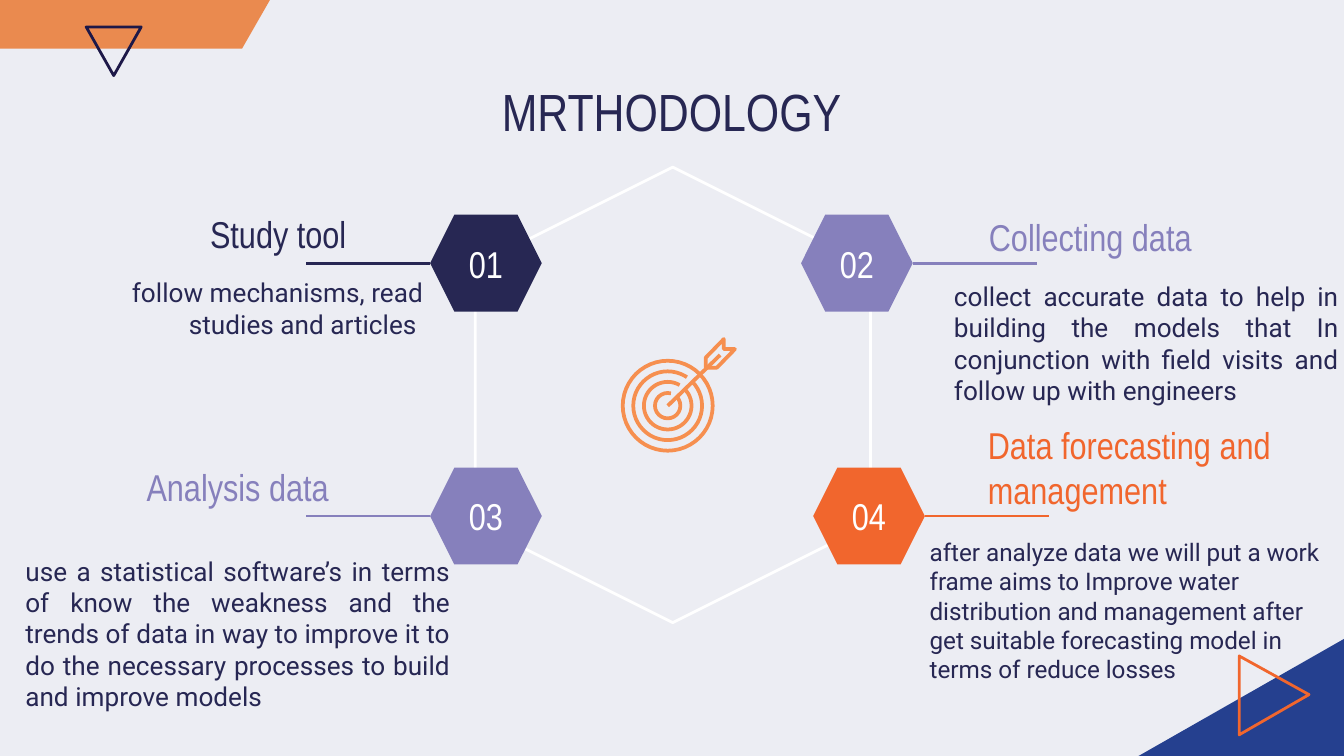
from lxml import etree
from pptx import Presentation
from pptx import util as u
from pptx.dml.color import RGBColor
from pptx.enum import shapes, text
from pptx.oxml.ns import qn

NAVY = RGBColor(0x27, 0x27, 0x53)
LILAC = RGBColor(0x86, 0x80, 0xBC)
FLAME = RGBColor(0xF1, 0x66, 0x2D)
WHITE = RGBColor(0xFF, 0xFF, 0xFF)
PALE = RGBColor(0xEC, 0xED, 0xF3)
PEACH = RGBColor(0xEA, 0x8A, 0x4F)
BLUE = RGBColor(0x25, 0x40, 0x8F)
INK = RGBColor(0x1D, 0x18, 0x48)
GOLD = RGBColor(0xF6, 0x8F, 0x4F)

HEAD, BODY = "Arial Narrow", "Roboto"
KIND, ALIGN = shapes.MSO_SHAPE, text.PP_ALIGN
TOP, MID = text.MSO_ANCHOR.TOP, text.MSO_ANCHOR.MIDDLE
LEFT, RIGHT, FULL = ALIGN.LEFT, ALIGN.RIGHT, ALIGN.JUSTIFY

TITLE = "MRTHODOLOGY"
HEX_W, HEX_H, ARM = 2.11, 1.83, 2.34
STEPS = [
    dict(num="01", hue=NAVY, spot=(8.13, 4.06), side=RIGHT,
         head="Study tool ", hbox=(2.03, 4.01, 4.93, 0.81),
         body="follow mechanisms, read studies and articles ",
         bbox=(1.8, 4.98, 6.45, 1.8), flow=RIGHT, size=14),
    dict(num="02", hue=LILAC, spot=(15.14, 4.06), side=LEFT,
         head="Collecting data", hbox=(18.44, 4.06, 4.93, 0.81),
         body="collect accurate data to help in building the models that In "
              "conjunction with field visits and follow up with engineers",
         bbox=(17.78, 5.05, 7.77, 2.87), flow=FULL, size=14),
    dict(num="03", hue=LILAC, spot=(8.13, 8.84), side=RIGHT,
         head="Analysis data ", hbox=(1.7, 8.79, 4.93, 0.81),
         body="use a statistical software’s in terms of know the weakness and "
              "the trends of data in way to improve it to do the necessary "
              "processes to build and improve models",
         bbox=(0.23, 10.24, 8.53, 3.73), flow=FULL, size=14),
    dict(num="04", hue=FLAME, spot=(15.37, 8.84), side=LEFT,
         head="Data forecasting and management", hbox=(18.42, 8.1, 6.4, 1.47),
         body="after analyze data we will put a work frame aims to Improve "
              "water distribution and management after get suitable "
              "forecasting model in terms of reduce losses",
         bbox=(17.32, 9.91, 8.18, 3.02), flow=LEFT, size=13),
]
HUB = (12.62, 7.67)
RINGS = [(0.85, 0, 359.99), (0.65, 315, 304), (0.45, 318, 300), (0.24, 320, 285)]
TAIL = [(13.34, 6.76), (13.68, 6.41), (13.68, 6.6),
        (13.89, 6.6), (13.55, 6.95), (13.34, 6.95)]

deck = Presentation()
deck.slide_width, deck.slide_height = u.Cm(25.4), u.Cm(14.29)
slide = deck.slides.add_slide(deck.slide_layouts[5])
slide.background.fill.solid()
slide.background.fill.fore_color.rgb = PALE
tree = slide.shapes


def cm(vals):
    return [u.Cm(v) for v in vals]


def paint(shape, fill=None, line=None, width=1.5):
    shape.shadow.inherit = False
    if fill is None:
        shape.fill.background()
    else:
        shape.fill.solid()
        shape.fill.fore_color.rgb = fill
    if line is None:
        shape.line.fill.background()
    else:
        shape.line.color.rgb = line
        shape.line.width = u.Pt(width)
    return shape


def form(kind, box, **look):
    return paint(tree.add_shape(kind, *cm(box)), **look)


def trace(dots, **look):
    pen = tree.build_freeform(*cm(dots[0]), scale=1.0)
    pen.add_line_segments([cm(dot) for dot in dots[1:]], close=True)
    return paint(pen.convert_to_shape(), **look)


def rule(start, end, hue, width=1.5):
    line = tree.add_connector(shapes.MSO_CONNECTOR.STRAIGHT, *cm(start), *cm(end))
    line.line.color.rgb = hue
    line.line.width = u.Pt(width)
    etree.SubElement(line._element.spPr, qn("a:effectLst"))


def write(words, box=None, shape=None, size=20, face=HEAD, hue=NAVY,
          align=LEFT, anchor=MID):
    shape = shape or tree.add_textbox(*cm(box))
    frame = shape.text_frame
    frame.word_wrap = True
    frame.auto_size = text.MSO_AUTO_SIZE.NONE
    frame.vertical_anchor = anchor
    frame.margin_left = frame.margin_right = u.Cm(0.25)
    frame.margin_top = frame.margin_bottom = u.Cm(0.25)
    para = frame.paragraphs[0]
    para.alignment = align
    run = para.add_run()
    run.text = words
    run.font.size = u.Pt(size)
    run.font.name = face
    run.font.color.rgb = hue


form(KIND.HEXAGON, (-0.56, -0.91, 5.66, 1.83), fill=PEACH).adjustments[0] = 0.286
trace([(1.63, 0.51), (2.67, 0.51), (2.15, 1.43)], line=INK)
form(KIND.DIAMOND, (21.44, 11.91, 8.51, 4.85), fill=BLUE)
trace([(23.42, 12.4), (24.74, 13.13), (23.42, 13.89)], line=FLAME)

loop = form(KIND.HEXAGON, (8.41, 3.73, 8.61, 7.47), line=WHITE)
loop.adjustments[0] = 0.25
loop.rotation = 90

title = tree.title
title.left, title.top, title.width, title.height = cm((3.23, 1.24, 18.92, 1.6))
write(TITLE, shape=title, size=28, align=ALIGN.CENTER, anchor=TOP)

for step in STEPS:
    left, top = step["spot"]
    near = left if step["side"] == RIGHT else left + HEX_W
    far = near - ARM if step["side"] == RIGHT else near + ARM
    mid = top + HEX_H / 2
    write(step["body"], step["bbox"], size=step["size"], face=BODY,
          align=step["flow"], anchor=TOP)
    write(step["head"], step["hbox"], hue=step["hue"], align=step["side"])
    rule((near, mid), (far, mid), step["hue"])
    node = form(KIND.HEXAGON, (left, top, HEX_W, HEX_H), fill=step["hue"])
    node.adjustments[0] = 0.25
    write(step["num"], shape=node, hue=WHITE, align=ALIGN.CENTER)

for rad, start, end in RINGS:
    box = (HUB[0] - rad, HUB[1] - rad, 2 * rad, 2 * rad)
    arc = form(KIND.ARC, box, line=GOLD, width=2)
    arc.adjustments[0], arc.adjustments[1] = start * 0.6, end * 0.6
rule(HUB, (13.61, 6.71), GOLD, width=2)
trace(TAIL, line=GOLD, width=2)

deck.save("out.pptx")
